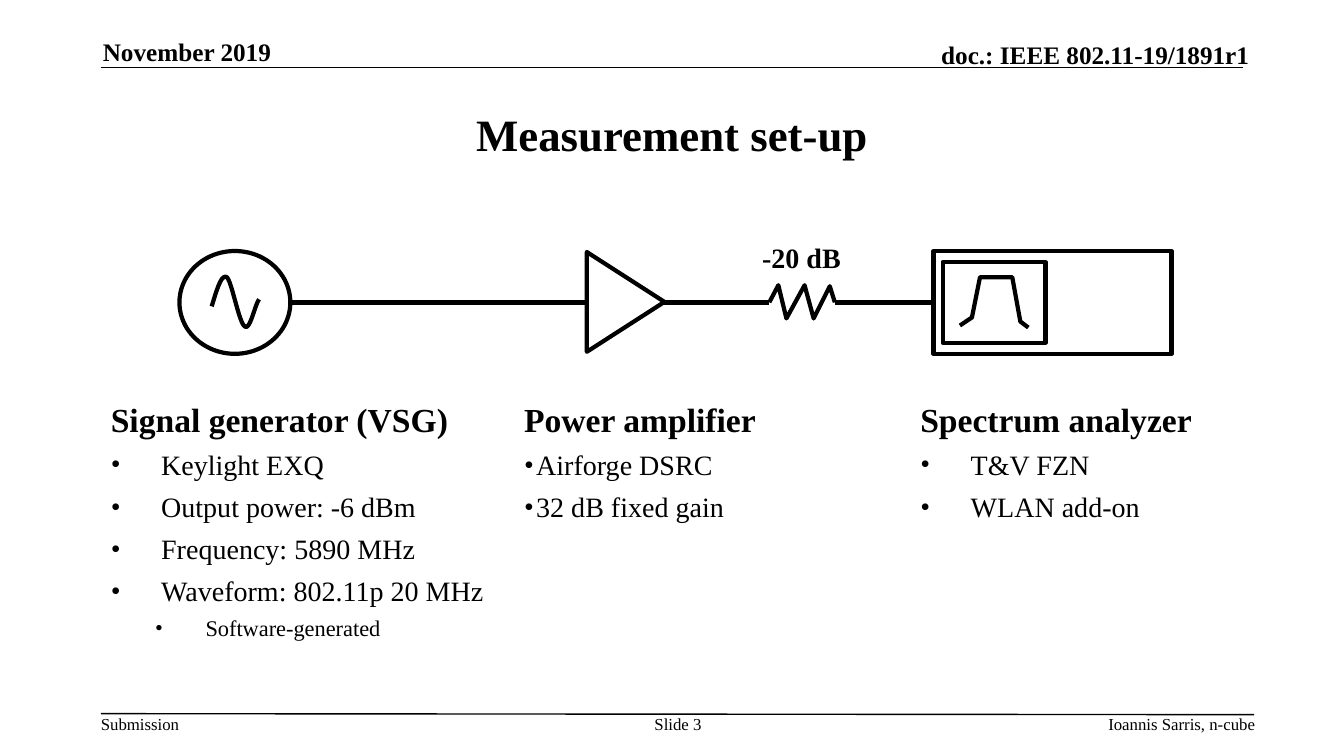
from lxml import etree
from pptx import Presentation
from pptx.dml.color import RGBColor
from pptx.enum.shapes import MSO_CONNECTOR, MSO_SHAPE
from pptx.enum.text import MSO_ANCHOR, PP_ALIGN
from pptx.oxml.ns import qn
from pptx.util import Inches, Pt

BLACK = RGBColor(0, 0, 0)
WHITE = RGBColor(255, 255, 255)
FONT = "Times New Roman"
LEFT, MID, RIGHT = PP_ALIGN.LEFT, PP_ALIGN.CENTER, PP_ALIGN.RIGHT
TOP, CENTER, BOTTOM = MSO_ANCHOR.TOP, MSO_ANCHOR.MIDDLE, MSO_ANCHOR.BOTTOM
OVAL, RECT = MSO_SHAPE.OVAL, MSO_SHAPE.RECTANGLE
WEDGE = MSO_SHAPE.ISOSCELES_TRIANGLE
STRAIGHT = MSO_CONNECTOR.STRAIGHT


def write(frame, text, size=20, bold=False, align=LEFT, before=0, indent=0, hang=0, level=0):
    para = frame.paragraphs[0]
    if para.runs:
        para = frame.add_paragraph()
    para.level = level
    if hang:
        props = para._p.get_or_add_pPr()
        props.set("marL", str(Inches(indent)))
        props.set("indent", str(-Inches(hang)))
        etree.SubElement(props, qn("a:buFont")).set("typeface", FONT)
        etree.SubElement(props, qn("a:buChar")).set("char", "•")
    para.alignment = align
    para.space_before = Pt(before)
    run = para.add_run()
    run.text = text
    font = run.font
    font.name = FONT
    font.size = Pt(size)
    font.bold = bold
    font.color.rgb = BLACK


def wire(x1, y1, x2, y2, width):
    line = shapes.add_connector(STRAIGHT, Inches(x1), Inches(y1), Inches(x2), Inches(y2))
    line.line.color.rgb = BLACK
    line.line.width = Pt(width)
    etree.SubElement(line._element.spPr, qn("a:effectLst"))
    return line


deck = Presentation()
deck.slide_width = Inches(13.33)
deck.slide_height = Inches(7.5)
slide = deck.slides.add_slide(deck.slide_layouts[5])
shapes = slide.shapes

title = shapes.title
title.left, title.top = Inches(1), Inches(0.75)
title.width, title.height = Inches(11.33), Inches(1.16)
title.text_frame.vertical_anchor = CENTER
write(title.text_frame, "Measurement set-up", size=32, bold=True, align=MID)

wire(1, 0.67, 12.33, 0.67, 1)
wire(1, 7.08, 12.44, 7.09, 1)

margins = [
    ("November 2019", 1.02, 0.36, 2.73, 0.3, 18, LEFT, BOTTOM),
    ("doc.: IEEE 802.11-19/1891r1", 7.29, 0.39, 5.1, 0.3, 18, RIGHT, BOTTOM),
    ("Submission", 1, 7.08, 0.79, 0.2, 12, LEFT, TOP),
    ("Slide 3", 6.34, 7.08, 0.77, 0.4, 12, MID, TOP),
    ("Ioannis Sarris, n-cube", 7.81, 7.08, 4.64, 0.2, 12, RIGHT, TOP),
]
for text, x, y, w, h, size, align, anchor in margins:
    frame = shapes.add_textbox(Inches(x), Inches(y), Inches(w), Inches(h)).text_frame
    frame.margin_left = frame.margin_right = frame.margin_top = frame.margin_bottom = 0
    frame.word_wrap = text != "Submission"
    frame.vertical_anchor = anchor
    write(frame, text, size=size, bold=size == 18, align=align)

columns = [
    ("Signal generator (VSG)", 1, 5.55, 2.76, 0.5, [
        "Keylight EXQ", "Output power: -6 dBm", "Frequency: 5890 MHz",
        "Waveform: 802.11p 20 MHz"]),
    ("Power amplifier", 5.1, 3.77, 1.35, 0.12, ["Airforge DSRC", "32 dB fixed gain"]),
    ("Spectrum analyzer", 9.03, 3.3, 2.76, 0.5, ["T&V FZN", "WLAN add-on"]),
]
frames = []
for head, x, w, h, indent, items in columns:
    frame = shapes.add_textbox(Inches(x), Inches(3.91), Inches(w), Inches(h)).text_frame
    frame.word_wrap = True
    write(frame, head, size=24, bold=True)
    for item in items:
        write(frame, item, before=6, indent=indent, hang=indent)
    frames.append(frame)
write(frames[0], "Software-generated", size=16, before=5, indent=0.94, hang=0.5, level=1)

parts = []
for kind, x, y, w, h, turn in [
    (OVAL, 1.78, 2.49, 1.1, 1.02, 0),
    (WEDGE, 5.71, 2.61, 0.99, 0.77, 90),
    (RECT, 9.26, 2.49, 2.36, 1.02, 0),
    (RECT, 9.35, 2.6, 1.02, 0.8, 0),
]:
    part = shapes.add_shape(kind, Inches(x), Inches(y), Inches(w), Inches(h))
    part.rotation = turn
    part.fill.solid()
    part.fill.fore_color.rgb = WHITE
    parts.append(part)

bends = [
    [(2.1, 3.04), (2.16, 2.84), (2.2, 2.72), (2.25, 2.75)],
    [(2.25, 2.75), (2.3, 2.79), (2.37, 3.21), (2.43, 3.24)],
    [(2.43, 3.24), (2.48, 3.28), (2.53, 3.02), (2.57, 2.97)],
]
STEPS = 12
wave = [bends[0][0]]
for bend in bends:
    for step in range(1, STEPS + 1):
        t = step / STEPS
        rates = [(1 - t) ** 3, 3 * t * (1 - t) ** 2, 3 * t ** 2 * (1 - t), t ** 3]
        wave.append(tuple(sum(r * p[axis] for r, p in zip(rates, bend)) for axis in (0, 1)))
band = [(9.52, 3.23), (9.64, 3.15), (9.72, 2.75), (10.04, 2.75), (10.12, 3.19), (10.2, 3.25)]
zigzag = [(7.63, 3), (7.72, 2.83), (7.8, 3.16), (7.98, 2.83), (8.07, 3.16), (8.23, 2.84), (8.28, 3)]
for trace in (wave, band, zigzag):
    points = [(Inches(x), Inches(y)) for x, y in trace]
    pen = shapes.build_freeform(*points[0])
    pen.add_line_segments(points[1:], close=False)
    part = pen.convert_to_shape()
    part.fill.background()
    parts.append(part)

for part in parts:
    part.shadow.inherit = False
    part.line.color.rgb = BLACK
    part.line.width = Pt(3)

wire(2.88, 3, 5.82, 3, 3)
wire(6.59, 3, 7.63, 3, 3)
wire(8.28, 3, 9.26, 3, 3).end_connect(parts[2], 1)

loss = shapes.add_textbox(Inches(7.46), Inches(2.34), Inches(0.99), Inches(0.44)).text_frame
loss.word_wrap = False
write(loss, "-20 dB", bold=True)

deck.save("out.pptx")
